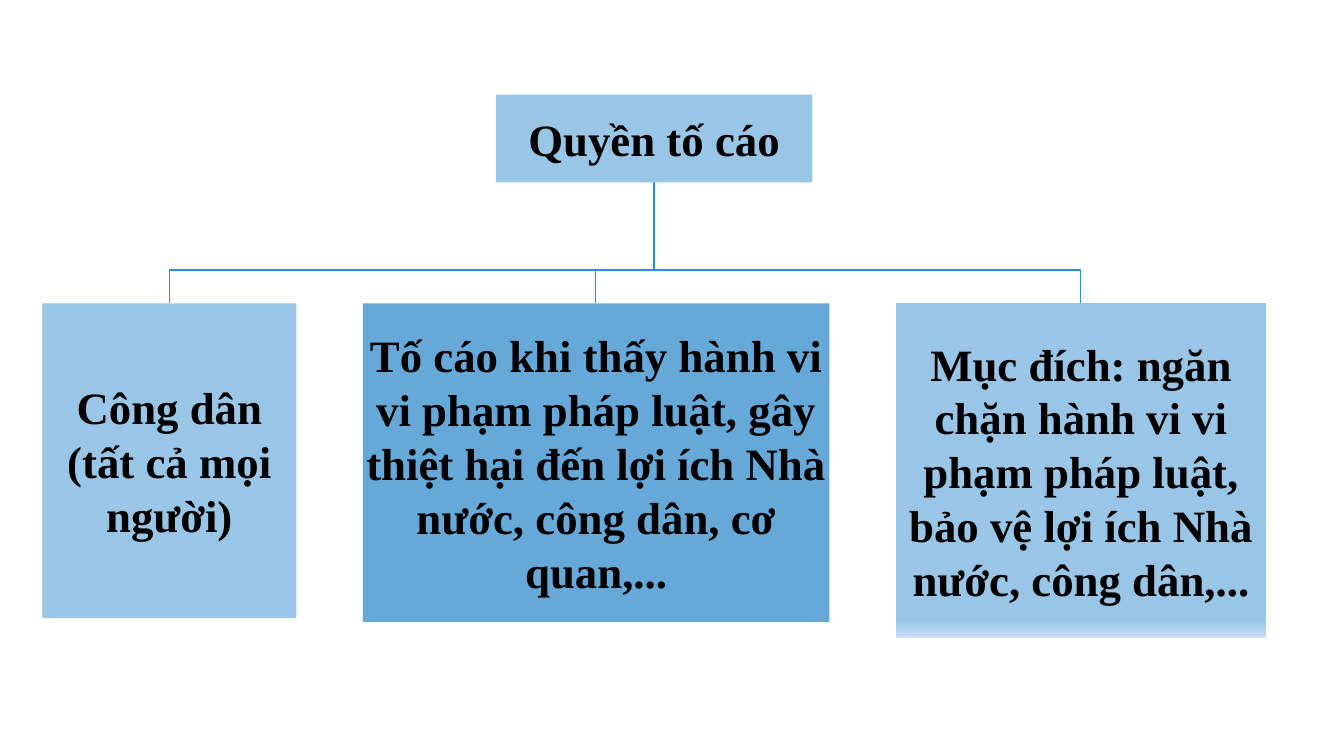
from pptx import Presentation
from pptx.dml.color import RGBColor
from pptx.enum.shapes import MSO_SHAPE as Shape
from pptx.enum.text import MSO_ANCHOR as Anchor, PP_ALIGN as Align
from pptx.util import Emu, Pt

PX = 9144  # one hundredth of an inch
COLORS = {"light": "99C6E6", "medium": "66A9D9", "fade": "CDDEFA",
          "line": "2D8AE7", "text": "000000"}


def px(length):
    return Emu(length * PX)


def color(name):
    return RGBColor.from_string(COLORS[name])


class Chart:
    """Draws the parts of an organisation chart on one slide."""

    font = {"name": "Times New Roman", "size": Pt(32), "bold": True}
    frame = {"word_wrap": True, "vertical_anchor": Anchor.MIDDLE,
             "margin_left": px(2), "margin_right": px(2),
             "margin_top": px(2), "margin_bottom": px(2)}

    def __init__(self, page):
        self.page = page

    def box(self, text, left, top, width, height, fill, fade=None):
        box = self.page.shapes.add_shape(
            Shape.RECTANGLE, px(left), px(top), px(width), px(height))
        box.shadow.inherit = False
        box.line.fill.background()
        if fade:
            box.fill.gradient()
            box.fill.gradient_angle = 270
            stops = zip(box.fill.gradient_stops, (fill, fade), (0.95, 1))
            for stop, name, position in stops:
                stop.color.rgb = color(name)
                stop.position = position
        else:
            box.fill.solid()
            box.fill.fore_color.rgb = color(fill)
        for key, value in self.frame.items():
            setattr(box.text_frame, key, value)
        para = box.text_frame.paragraphs[0]
        para.alignment = Align.CENTER
        span = para.add_run()
        span.text = text
        for key, value in self.font.items():
            setattr(span.font, key, value)
        span.font.color.rgb = color("text")

    def branch(self, start_x, start_y, bend_y, end_x, end_y):
        builder = self.page.shapes.build_freeform(start_x, start_y, scale=PX)
        builder.add_line_segments(
            [(start_x, bend_y), (end_x, bend_y), (end_x, end_y)], close=False)
        branch = builder.convert_to_shape()
        branch.shadow.inherit = False
        branch.fill.background()
        branch.line.color.rgb = color("line")
        branch.line.width = Pt(1)


def main():
    deck = Presentation()
    deck.slide_width, deck.slide_height = Emu(12192000), Emu(6858000)
    chart = Chart(deck.slides.add_slide(deck.slide_layouts[6]))

    root_left, root_top, root_width, root_height = 492, 94, 314, 87
    child_top, bend_y = 301, 268
    children = [
        ("Công dân (tất cả mọi người)", 42, 252, 312, "light", None),
        ("Tố cáo khi thấy hành vi vi phạm pháp luật, gây thiệt hại đến "
         "lợi ích Nhà nước, công dân, cơ quan,...",
         360, 463, 316, "medium", None),
        ("Mục đích: ngăn chặn hành vi vi phạm pháp luật, bảo vệ lợi ích "
         "Nhà nước, công dân,...", 889, 367, 332, "light", "fade"),
    ]

    # Branches from the root to each child
    for _, left, width, *_ in children:
        chart.branch(root_left + root_width // 2, root_top + root_height,
                     bend_y, left + width // 2, child_top)

    # Root and child boxes
    chart.box("Quyền tố cáo", root_left, root_top, root_width, root_height,
              "light")
    for text, left, width, height, fill, fade in children:
        chart.box(text, left, child_top, width, height, fill, fade)

    deck.save("out.pptx")


if __name__ == "__main__":
    main()
